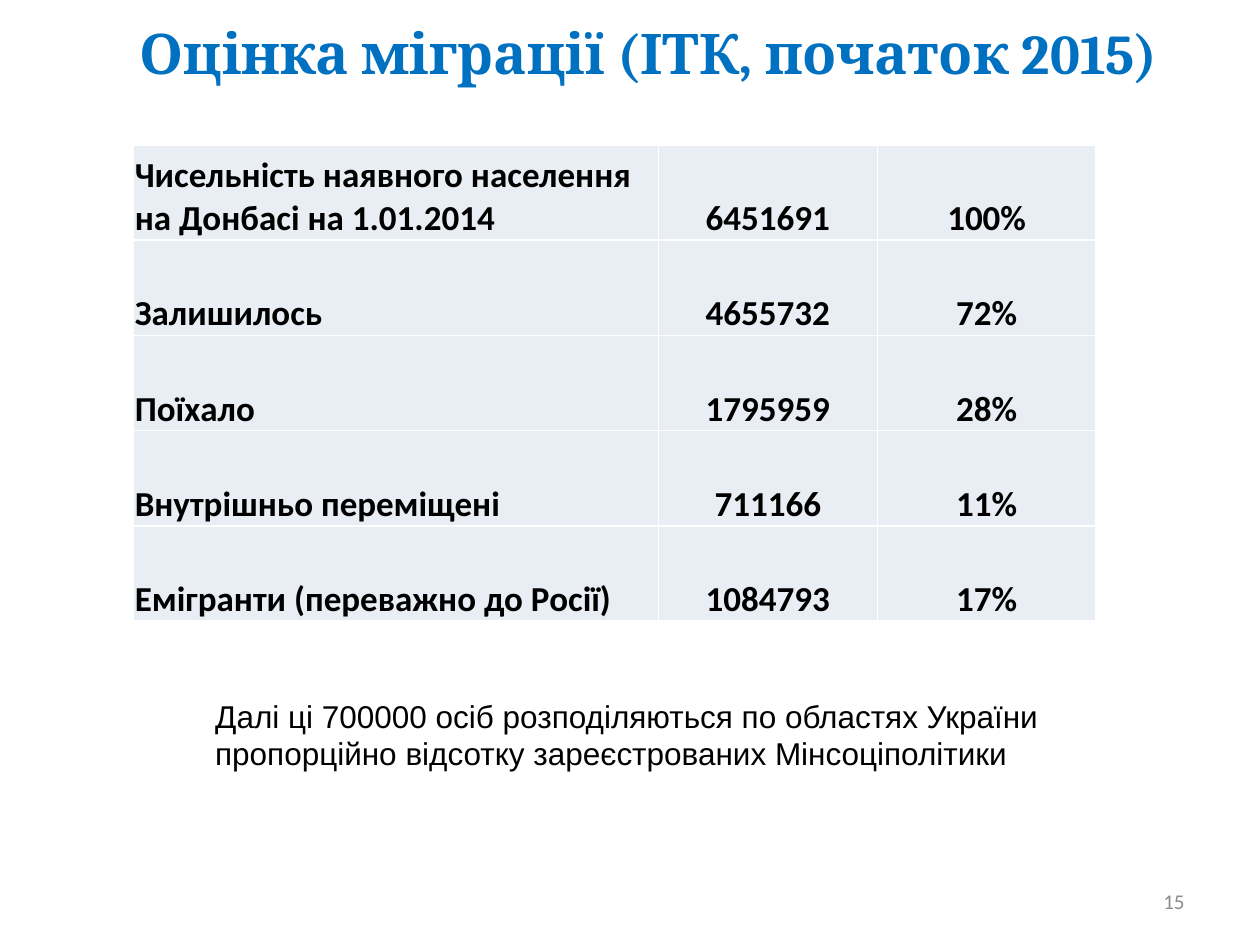
from dataclasses import dataclass
from lxml import etree
from pptx import Presentation
from pptx.dml.color import RGBColor
from pptx.enum.text import MSO_ANCHOR, PP_ALIGN
from pptx.oxml.ns import qn
from pptx.util import Inches, Pt

LEFT, MID, RIGHT = PP_ALIGN.LEFT, PP_ALIGN.CENTER, PP_ALIGN.RIGHT
TOP, CENTER, BASE = MSO_ANCHOR.TOP, MSO_ANCHOR.MIDDLE, MSO_ANCHOR.BOTTOM
WIDE, HIGH = Inches(10), Inches(7.5)


@dataclass(frozen=True)
class Theme:
    """Hold the fills, rules and type styles of the slide."""
    band: str = "E9EDF4"
    rule: str = "FFFFFF"
    title: tuple = ("Cambria", 32, True, "0070C0")
    cell: tuple = ("Calibri", 20, True, "000000")
    note: tuple = ("Arial", 18, False, "000000")
    page: tuple = ("Calibri", 12, False, "8C8C8C")


THEME = Theme()
TITLE = "Оцінка міграції (ІТК, початок 2015)"
ROWS = [
    ("Чисельність наявного населення на Донбасі на 1.01.2014", "6451691", "100%"),
    ("Залишилось", "4655732", "72%"),
    ("Поїхало", "1795959", "28%"),
    ("Внутрішньо переміщені", "711166", "11%"),
    ("Емігранти (переважно до Росії)", "1084793", "17%"),
]
SPANS = (12, 5, 5)
NOTE = [
    "Далі ці 700000 осіб розподіляються по областях України",
    "пропорційно відсотку зареєстрованих Мінсоціполітики",
]


def share(x, y, w, h):
    """Turn shares of the slide into a box of lengths."""
    return int(WIDE * x), int(HIGH * y), int(WIDE * w), int(HIGH * h)


def assign(item, form):
    """Set each named value of a format on an item."""
    for name, value in form.items():
        setattr(item, name, value)


def write(frame, lines, style, align):
    """Write lines as paragraphs in one type style."""
    face, size, bold, color = style
    for i, line in enumerate(lines):
        para = frame.add_paragraph() if i else frame.paragraphs[0]
        para.alignment = align
        run = para.add_run()
        run.text = line
        assign(run.font, {"name": face, "size": Pt(size), "bold": bold})
        run.font.color.rgb = RGBColor.from_string(color)


def add_text(slide, box, lines, style, align=LEFT, anchor=CENTER, wrap=True):
    """Place a text box with its lines."""
    frame = slide.shapes.add_textbox(*box).text_frame
    assign(frame, {"word_wrap": wrap, "vertical_anchor": anchor})
    write(frame, lines, style, align)


def add_rules(cell):
    """Draw the four borders of a cell ahead of its fill."""
    props = cell._tc.get_or_add_tcPr()
    for i, side in enumerate(("lnL", "lnR", "lnT", "lnB")):
        line = etree.Element(qn("a:" + side), w=str(Pt(1)))
        fill = etree.SubElement(line, qn("a:solidFill"))
        etree.SubElement(fill, qn("a:srgbClr"), val=THEME.rule)
        props.insert(i, line)


def add_grid(slide, box, rows):
    """Place the migration table with columns split by span."""
    table = slide.shapes.add_table(len(rows), len(SPANS), *box).table
    assign(table, {"first_row": False, "horz_banding": False})
    for col, span in zip(table.columns, SPANS):
        col.width = box[2] * span // sum(SPANS)
    edge = Inches(0.01)
    form = {"vertical_anchor": BASE, "margin_left": edge, "margin_right": edge,
            "margin_top": edge, "margin_bottom": 0}
    for r, row in enumerate(rows):
        for c, text in enumerate(row):
            cell = table.cell(r, c)
            assign(cell, form)
            cell.fill.solid()
            cell.fill.fore_color.rgb = RGBColor.from_string(THEME.band)
            add_rules(cell)
            write(cell.text_frame, [text], THEME.cell, MID if c else LEFT)


def main():
    """Build the slide and save it."""
    deck = Presentation()
    assign(deck, {"slide_width": WIDE, "slide_height": HIGH})
    slide = deck.slides.add_slide(deck.slide_layouts[6])
    add_text(slide, share(0.09, 0, 0.85, 0.11), [TITLE], THEME.title, MID)
    add_grid(slide, (Inches(1.06), Inches(1.15), Inches(7.64), Inches(3.78)), ROWS)
    add_text(slide, (Inches(7.17), Inches(6.95), Inches(2.33), Inches(0.4)),
             ["15"], THEME.page, RIGHT)
    add_text(slide, (Inches(1.61), Inches(5.48), Inches(6.86), Inches(0.71)),
             NOTE, THEME.note, anchor=TOP, wrap=False)
    deck.save("out.pptx")


if __name__ == "__main__":
    main()
